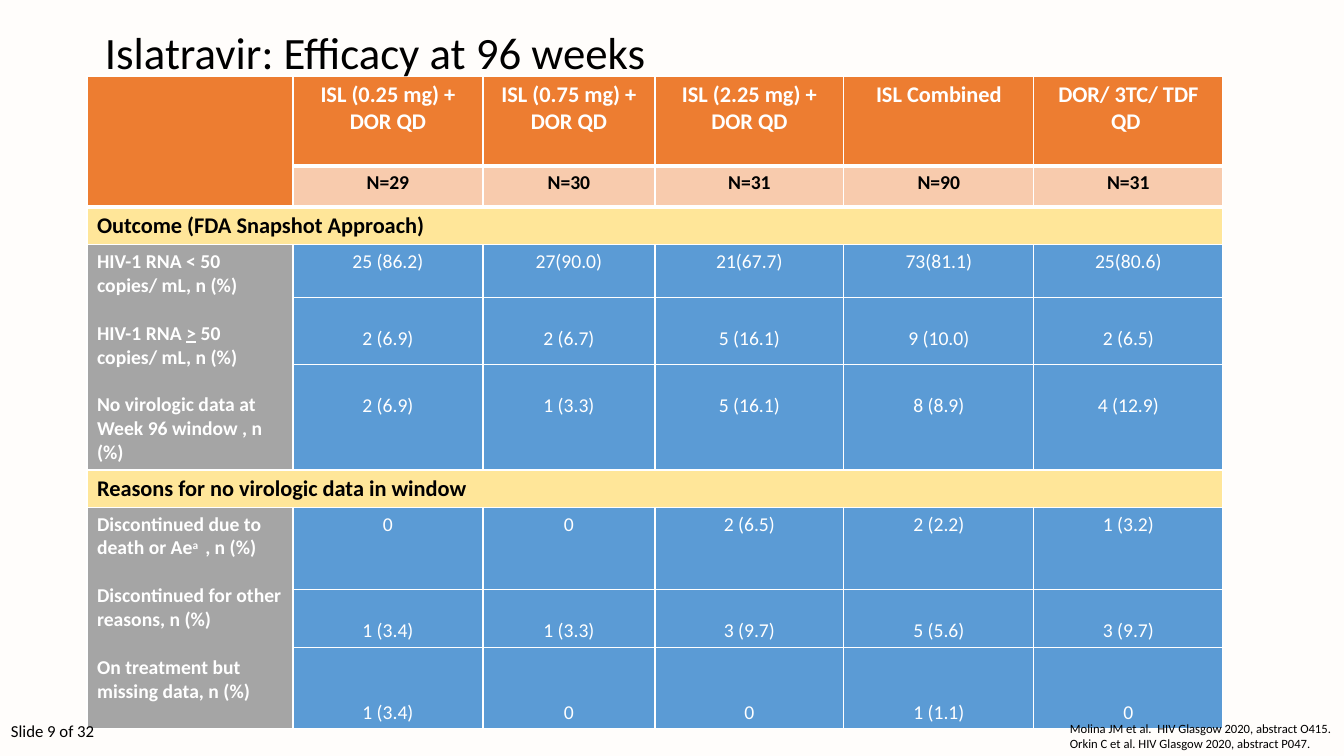
from lxml import etree
from pptx import Presentation
from pptx import util as u
from pptx.dml.color import RGBColor
from pptx.enum import text
from pptx.oxml.ns import qn

PX = 12192000 / 1344
COLORS = {
    "background": "FFFDFB", "white": "FFFFFF", "black": "000000",
    "header": "ED7D31", "count": "F8CBAD", "section": "FFE699",
    "label": "A5A5A5", "value": "5B9BD5",
}
CENTER = text.PP_ALIGN.CENTER
LINE = 24  # height of one 14 pt line, in px
PAD = 5

COLUMNS = [206, 190, 172, 189, 190, 189]
ROWS = [90, 38, 38, 53, 67, 105, 37, 82, 58, 81]
HEADERS = ["ISL (0.25 mg) + DOR QD", "ISL (0.75 mg) + DOR QD", "ISL (2.25 mg) + DOR QD",
           "ISL Combined", "DOR/ 3TC/ TDF\nQD "]
COUNTS = ["N=29", "N=30", "N=31", "N=90", "N=31"]

# Each section: title, labels as runs of (text, style), rows of (lines skipped, values)
SECTIONS = [
    ("Outcome (FDA Snapshot Approach)",
     [[("HIV-1 RNA < 50 copies/ mL, n (%)", "")],
      [("HIV-1 RNA ", ""), (">", "underline"), (" 50 copies/ mL, n (%)", "")],
      [("No virologic data at Week 96 window , n (%)", "")]],
     [(0, ["25 (86.2)", "27(90.0)", "21(67.7)", "73(81.1)", "25(80.6)"]),
      (1, ["2 (6.9)", "2 (6.7)", "5 (16.1)", "9 (10.0)", "2 (6.5)"]),
      (1, ["2 (6.9)", "1 (3.3)", "5 (16.1)", "8 (8.9)", "4 (12.9)"])]),
    ("Reasons for no virologic data in window",
     [[("Discontinued due to death or Ae", ""), ("a ", "superscript"), (" , n (%)", "")],
      [("Discontinued for other reasons, n (%)", "")],
      [("On treatment but missing data, n (%)", "")]],
     [(0, ["0", "0", "2 (6.5)", "2 (2.2)", "1 (3.2)"]),
      (1, ["1 (3.4)", "1 (3.3)", "3 (9.7)", "5 (5.6)", "3 (9.7)"]),
      (2, ["1 (3.4)", "0", "0", "1 (1.1)", "0"])]),
]


def px(n):
    return u.Emu(round(n * PX))


def rgb(name):
    return RGBColor.from_string(COLORS[name])


def style_run(r, size, color, bold=False):
    r.font.name = "Calibri"
    r.font.size = u.Pt(size)
    r.font.bold = bold
    r.font.color.rgb = rgb(color)


def style_text(tf, size, color, bold=False, align=None):
    for p in tf.paragraphs:
        p.alignment = align
        for r in p.runs:
            style_run(r, size, color, bold)


def style_cell(cell, fill, bottom=1):
    """Give the cell white borders and a solid fill."""
    tc_pr = cell._tc.get_or_add_tcPr()
    for side, points in (("L", 1), ("R", 1), ("T", 1), ("B", bottom)):
        ln = etree.SubElement(tc_pr, qn(f"a:ln{side}"), w=str(u.Pt(points)))
        solid = etree.SubElement(ln, qn("a:solidFill"))
        etree.SubElement(solid, qn("a:srgbClr"), val=COLORS["white"])
    cell.fill.solid()
    cell.fill.fore_color.rgb = rgb(fill)


def fill_row(table, row, values, fill, size, color, bold, skip=0, bottom=1):
    for col, value in enumerate(values, 1):
        cell = table.cell(row, col)
        style_cell(cell, fill, bottom)
        cell.text_frame.text = value
        style_text(cell.text_frame, size, color, bold, CENTER)
        if skip:
            cell.margin_top = px(PAD + skip * LINE)
            cell.margin_bottom = px(PAD - 1)


def fill_labels(cell, labels):
    tf = cell.text_frame
    for i, runs in enumerate(labels):
        p = tf.add_paragraph() if i else tf.paragraphs[0]
        if i:
            p.space_before = px(LINE)
        for words, style in runs:
            r = p.add_run()
            r.text = words
            style_run(r, 14, "white", True)
            if style == "underline":
                r.font.underline = True
            elif style == "superscript":
                r.font._element.set("baseline", "30000")


def add_section(table, top, title, labels, rows):
    head = table.cell(top, 0)
    head.merge(table.cell(top, len(COLUMNS) - 1))
    head.text_frame.text = title
    style_text(head.text_frame, 16, "black", True)
    for col in range(len(COLUMNS)):
        style_cell(table.cell(top, col), "section")

    label = table.cell(top + 1, 0)
    label.merge(table.cell(top + len(rows), 0))
    fill_labels(label, labels)
    for row, (skip, values) in enumerate(rows, top + 1):
        style_cell(table.cell(row, 0), "label")
        fill_row(table, row, values, "value", 14, "white", False, skip)


def add_results(slide, x, y):
    table = slide.shapes.add_table(len(ROWS), len(COLUMNS), px(x), px(y),
                                   px(sum(COLUMNS)), px(sum(ROWS))).table
    for column, width in zip(table.columns, COLUMNS):
        column.width = px(width)
    for row, height in zip(table.rows, ROWS):
        row.height = px(height)

    table.cell(0, 0).merge(table.cell(1, 0))
    for row in range(2):
        style_cell(table.cell(row, 0), "header", bottom=3)
    fill_row(table, 0, HEADERS, "header", 16, "white", True, bottom=3)
    fill_row(table, 1, COUNTS, "count", 14, "black", True)

    top = 2
    for title, labels, rows in SECTIONS:
        add_section(table, top, title, labels, rows)
        top += 1 + len(rows)


def add_text(slide, x, y, w, h, words, size, wrap=True, anchor=text.MSO_ANCHOR.TOP):
    tf = slide.shapes.add_textbox(px(x), px(y), px(w), px(h)).text_frame
    tf.word_wrap = wrap
    tf.vertical_anchor = anchor
    tf.text = words
    style_text(tf, size, "black")


def main():
    prs = Presentation()
    prs.slide_width, prs.slide_height = px(1344), px(756)
    slide = prs.slides.add_slide(prs.slide_layouts[6])
    slide.background.fill.solid()
    slide.background.fill.fore_color.rgb = rgb("background")

    add_results(slide, 87, 76)
    add_text(slide, 1060, 716, 295, 40,
             "Molina JM et al.\u00a0\u00a0HIV Glasgow 2020, abstract O415.\n"
             "Orkin C et al.\u00a0HIV Glasgow 2020, abstract P047.", 9)
    add_text(slide, 95, 20, 578, 65, "Islatravir: Efficacy at 96 weeks", 32, wrap=False)
    add_text(slide, 1, 711, 302, 40, "Slide 9 of 32", 12, anchor=text.MSO_ANCHOR.MIDDLE)
    prs.save("out.pptx")


if __name__ == "__main__":
    main()
